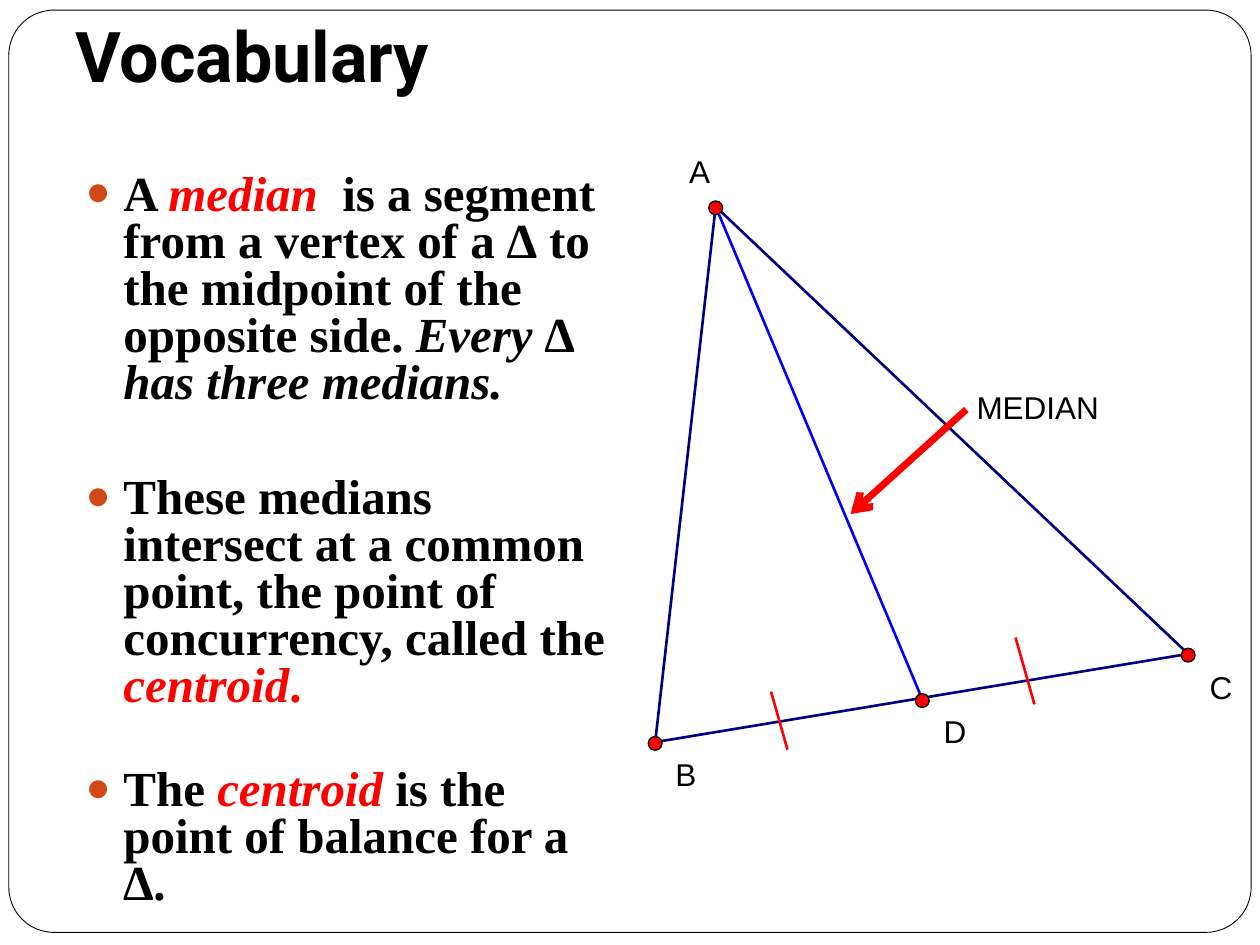
from lxml import etree
from pptx import Presentation
from pptx.dml.color import RGBColor
from pptx.enum.shapes import MSO_CONNECTOR, MSO_SHAPE
from pptx.enum.text import MSO_ANCHOR, MSO_AUTO_SIZE, PP_ALIGN
from pptx.oxml.ns import qn
from pptx.util import Inches, Pt

STRAIGHT = MSO_CONNECTOR.STRAIGHT
OVAL, ROUNDED = MSO_SHAPE.OVAL, MSO_SHAPE.ROUNDED_RECTANGLE
TOP, BOTTOM = MSO_ANCHOR.TOP, MSO_ANCHOR.BOTTOM
LEFT = PP_ALIGN.LEFT
NO_FIT = MSO_AUTO_SIZE.NONE

BLACK = RGBColor(0, 0, 0)
WHITE = RGBColor(255, 255, 255)
RED = RGBColor(255, 0, 0)
NAVY = RGBColor(0, 0, 128)
BLUE = RGBColor(0, 0, 255)
BULLET_ORANGE = RGBColor(0xD3, 0x48, 0x17)

DEFINITIONS = [
    (5.8, [("A ", BLACK, False), ("median  ", RED, True),
           ("is a segment from a vertex of a ∆ to the midpoint of the opposite side. ",
            BLACK, False),
           ("Every ∆ has three medians.", BLACK, True)]),
    (38.8, [("These medians intersect at a common point, the point of concurrency, called the ",
             BLACK, False),
            ("centroid", RED, True), (".", RED, False)]),
    (32.5, [("The ", BLACK, False), ("centroid ", RED, True),
            ("is the point of balance for a ∆.", BLACK, False)]),
]


def add_text(paragraph, text, *, font, size, color=BLACK, bold=False, italic=False):
    run = paragraph.add_run()
    run.text = text
    run.font.name = font
    run.font.size = Pt(size)
    run.font.color.rgb = color
    run.font.bold = bold
    run.font.italic = italic


def place(part, box):
    part.left, part.top, part.width, part.height = (Inches(length) for length in box)


def set_frame(frame, anchor, insets):
    frame.word_wrap = True
    frame.auto_size = NO_FIT
    frame.vertical_anchor = anchor
    (frame.margin_left, frame.margin_top,
     frame.margin_right, frame.margin_bottom) = (Inches(inset) for inset in insets)


def add_bullet(paragraph):
    properties = paragraph._p.get_or_add_pPr()
    properties.set("marL", str(Inches(0.3)))
    properties.set("indent", str(-Inches(0.3)))
    color = etree.SubElement(properties, qn("a:buClr"))
    etree.SubElement(color, qn("a:srgbClr"), val=str(BULLET_ORANGE))
    etree.SubElement(properties, qn("a:buSzPct"), val="85000")
    etree.SubElement(properties, qn("a:buFont"), typeface="Arial")
    etree.SubElement(properties, qn("a:buChar"), char="●")


def add_outlined(shapes, preset, box, fill, line_width):
    outlined = shapes.add_shape(preset, *(Inches(length) for length in box))
    outlined.shadow.inherit = False
    outlined.fill.solid()
    outlined.fill.fore_color.rgb = fill
    outlined.line.color.rgb = BLACK
    outlined.line.width = Pt(line_width)
    return outlined


def add_line(shapes, start, end, color, width=1.5, arrow=False):
    line = shapes.add_connector(STRAIGHT, *(Inches(length) for length in (*start, *end)))
    line.line.color.rgb = color
    line.line.width = Pt(width)
    if arrow:
        etree.SubElement(line.line._get_or_add_ln(), qn("a:tailEnd"), type="arrow")
    etree.SubElement(line._element.spPr, qn("a:effectLst"))


def add_label(shapes, text, box):
    label = shapes.add_textbox(*(Inches(length) for length in box))
    set_frame(label.text_frame, TOP, (0, 0, 0, 0))
    label.text_frame.word_wrap = False
    add_text(label.text_frame.paragraphs[0], text, font="Arial", size=18)


def build_border(slide, box):
    border = add_outlined(slide.shapes, ROUNDED, box, WHITE, 0.5)
    border.adjustments[0] = 0.049
    slide.shapes._spTree.insert(2, border._element)


def build_title(slide, box):
    title = slide.shapes.title
    place(title, box)
    set_frame(title.text_frame, BOTTOM, (0.1, 0.05, 0.1, 0.1))
    heading = title.text_frame.paragraphs[0]
    heading.alignment = LEFT
    add_text(heading, "Vocabulary", font="Roboto", size=40, bold=True)


def build_definitions(slide, box):
    body = slide.placeholders[1]
    place(body, box)
    frame = body.text_frame
    set_frame(frame, TOP, (0.1, 0.05, 0.1, 0.05))
    for index, (space_before, pieces) in enumerate(DEFINITIONS):
        paragraph = frame.add_paragraph() if index else frame.paragraphs[0]
        paragraph.alignment = LEFT
        paragraph.line_spacing = Pt(26.9)
        paragraph.space_before = Pt(space_before)
        add_bullet(paragraph)
        for text, color, italic in pieces:
            add_text(paragraph, text, font="Times New Roman", size=28,
                     color=color, bold=True, italic=italic)


def build_triangle(slide, box):
    left, top, _, _ = box
    shapes = slide.shapes

    def at(x, y):
        return left + x, top + y

    a, b, c, d = at(0.53, 0.43), at(0.05, 4.68), at(4.28, 3.98), at(2.17, 4.34)
    for start, end in ((a, c), (a, b), (c, b)):
        add_line(shapes, start, end, NAVY)
    add_line(shapes, a, d, BLUE)
    for start, end in ((at(0.97, 4.28), at(1.1, 4.74)), (at(2.91, 3.85), at(3.06, 4.38))):
        add_line(shapes, start, end, RED)

    dot = 0.11
    vertices = (("A", a, (-0.21, -0.43)), ("B", b, (0.16, 0.1)),
                ("C", c, (0.17, 0.11)), ("D", d, (0.17, 0.1)))
    for name, (x, y), (shift_x, shift_y) in vertices:
        add_outlined(shapes, OVAL, (x - dot / 2, y - dot / 2 + 0.01, dot, dot), RED, 0)
        add_label(shapes, name, (x + shift_x, y + shift_y, 0.3, 0.38))

    add_label(shapes, "MEDIAN", (*at(2.6, 1.87), 1.05, 0.38))
    add_line(shapes, at(2.52, 2.04), at(1.6, 2.87), RED, width=4, arrow=True)


def main():
    presentation = Presentation()
    presentation.slide_width, presentation.slide_height = Inches(10), Inches(7.5)
    slide = presentation.slides.add_slide(presentation.slide_layouts[1])
    build_border(slide, (0.07, 0.08, 9.86, 7.32))
    build_title(slide, (0.5, 0, 9, 0.87))
    build_definitions(slide, (0.58, 1.33, 4.38, 4.42))
    build_triangle(slide, (5.15, 1.21, 4.75, 5.16))
    presentation.save("out.pptx")


if __name__ == "__main__":
    main()
